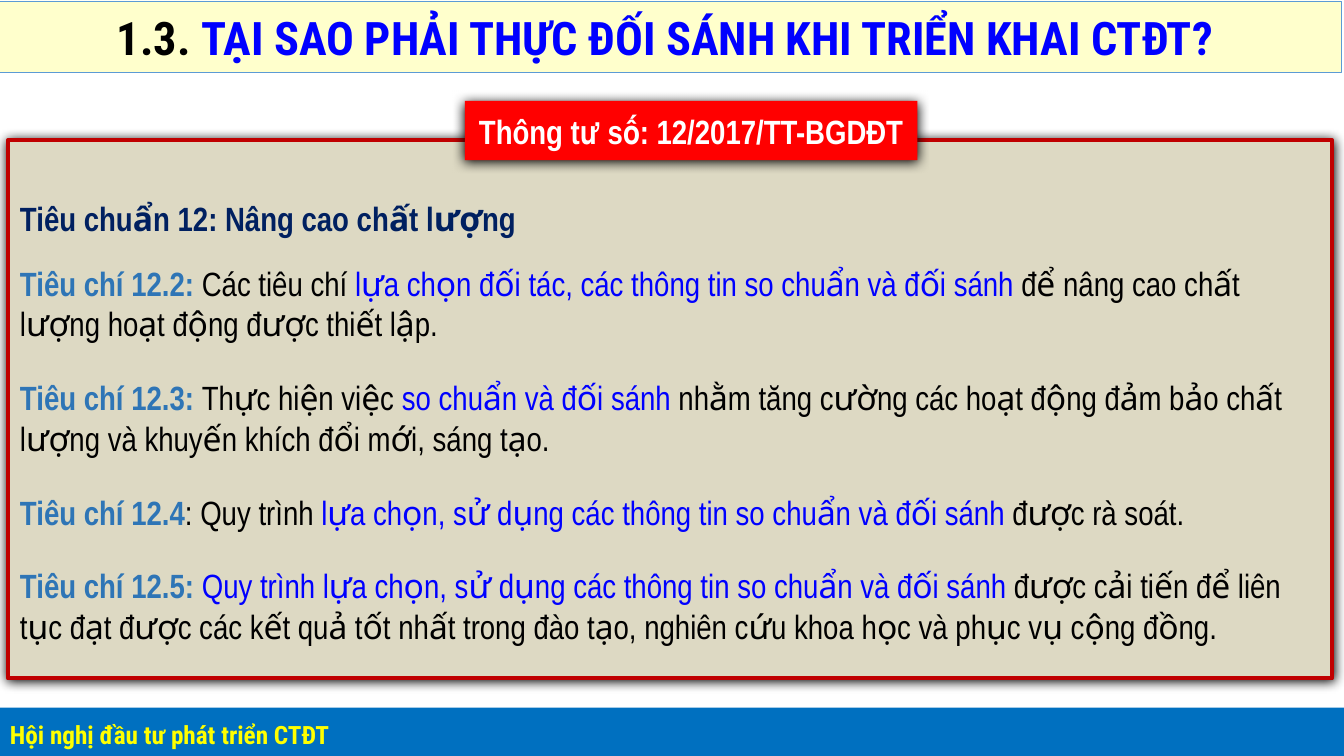
from lxml import etree
from pptx import Presentation
from pptx.dml.color import RGBColor
from pptx.enum import lang, shapes as kinds, text
from pptx.oxml.ns import qn
from pptx.util import Inches, Pt

HEADING_FONT, BODY_FONT = "Roboto Condensed", "Arial Narrow"
BLACK, BLUE, STEEL, NAVY = "000000", "0000FF", "2E75B6", "002060"

# Each run is (wording, colour, bold).
CRITERIA = [
    [("Tiêu chuẩn 12: Nâng cao chất lượng", NAVY, True)],
    [("Tiêu chí 12.2: ", STEEL, True),
     ("Các tiêu chí ", BLACK, False),
     ("lựa chọn đối tác, các thông tin so chuẩn và đối sánh ", BLUE, False),
     ("để nâng cao chất lượng hoạt động được thiết lập.", BLACK, False)],
    [("Tiêu chí 12.3: ", STEEL, True),
     ("Thực hiện việc ", BLACK, False),
     ("so chuẩn và đối sánh ", BLUE, False),
     ("nhằm tăng cường các hoạt động đảm bảo chất lượng và khuyến khích "
      "đổi mới, sáng tạo.", BLACK, False)],
    [("Tiêu chí 12.4", STEEL, True),
     (": Quy trình ", BLACK, False),
     ("lựa chọn, sử dụng các thông tin so chuẩn và đối sánh", BLUE, False),
     (" được rà soát.", BLACK, False)],
    [("Tiêu chí 12.5: ", STEEL, True),
     ("Quy trình lựa chọn, sử dụng các thông tin so chuẩn và đối sánh ", BLUE, False),
     ("được cải tiến để liên tục đạt được các kết quả tốt nhất trong đào tạo, "
      "nghiên cứu khoa học và phục vụ cộng đồng.", BLACK, False)],
]


def rgb(value):
    return RGBColor.from_string(value)


def add_block(parent, left, top, width, height, fill, line=None, line_width=0):
    """Add a flat rectangle with its text set left and in the middle."""
    block = parent.add_shape(kinds.MSO_SHAPE.RECTANGLE, Inches(left), Inches(top),
                             Inches(width), Inches(height))
    block.fill.solid()
    block.fill.fore_color.rgb = rgb(fill)
    if line:
        block.line.color.rgb = rgb(line)
        block.line.width = Pt(line_width)
    else:
        block.line.fill.background()
    block.shadow.inherit = False
    block.text_frame.vertical_anchor = text.MSO_ANCHOR.MIDDLE
    block.text_frame.paragraphs[0].alignment = text.PP_ALIGN.LEFT
    return block


def add_glow_shadow(block):
    """Give the block a soft black shadow just below it."""
    effects = block._element.spPr.find(qn("a:effectLst"))
    shadow = etree.SubElement(effects, qn("a:outerShdw"), blurRad=str(Pt(8.5)),
                              dist=str(Pt(1)), dir="5400000", algn="t",
                              rotWithShape="0")
    etree.SubElement(shadow, qn("a:srgbClr"), val=BLACK)


def write_runs(paragraph, runs, font, size, language=None):
    for wording, colour, bold in runs:
        run = paragraph.add_run()
        run.text = wording
        run.font.name = font
        run.font.size = Pt(size)
        run.font.bold = bold
        run.font.color.rgb = rgb(colour)
        run.font.language_id = language


def add_title(slide, left, top, width, height):
    banner = add_block(slide.shapes, left, top, width, height, "FFFFCC", "5B9BD5", 0.5)
    frame = banner.text_frame
    frame.margin_left, frame.margin_right = Inches(1.19), Inches(0.13)
    frame.margin_top = frame.margin_bottom = Inches(0.07)
    write_runs(frame.paragraphs[0],
               [("1.3. ", BLACK, True),
                ("TẠI SAO PHẢI THỰC ĐỐI SÁNH KHI TRIỂN KHAI CTĐT?", BLUE, True)],
               HEADING_FONT, 33)


def add_footer(slide, left, top, width, height):
    footer = add_block(slide.shapes, left, top, width, height, "0070C0")
    motto = footer.text_frame.paragraphs[0]
    motto.line_spacing = 1.1
    motto.space_before, motto.space_after = Pt(12), Pt(6)
    write_runs(motto, [("Hội nghị đầu tư phát triển CTĐT", "FFFF00", True)],
               HEADING_FONT, 18)


def add_circular_panel(slide, left, top, width, height):
    """Add the framed panel, and the circular's number across its top edge."""
    group = slide.shapes.add_group_shape().shapes
    panel = add_block(group, left, top, width, height, "DDD9C3", "C00000", 3)
    label = add_block(group, left + 4.53, top - 0.39, 4.49, 0.59, "FF0000")
    for block in (panel, label):
        add_glow_shadow(block)
    number = label.text_frame.paragraphs[0]
    number.alignment = text.PP_ALIGN.CENTER
    write_runs(number, [("Thông tư số: 12/2017/TT-BGDĐT", "FFFFFF", True)],
               BODY_FONT, 24)


def add_criteria(slide, left, top, width, height):
    frame = slide.shapes.add_textbox(Inches(left), Inches(top), Inches(width),
                                     Inches(height)).text_frame
    frame.word_wrap = True
    frame.auto_size = text.MSO_AUTO_SIZE.SHAPE_TO_FIT_TEXT
    for index, runs in enumerate(CRITERIA):
        criterion = frame.add_paragraph() if index else frame.paragraphs[0]
        criterion.space_before = criterion.space_after = Pt(12 if index else 6)
        write_runs(criterion, runs, BODY_FONT, 24, lang.MSO_LANGUAGE_ID.VIETNAMESE)


def main():
    deck = Presentation()
    deck.slide_width, deck.slide_height = Inches(13.33), Inches(7.5)
    slide = deck.slides.add_slide(deck.slide_layouts[6])
    add_title(slide, -0.03, 0.01, 13.33, 0.71)
    add_footer(slide, 0, 7.02, 13.33, 0.51)
    add_circular_panel(slide, 0.08, 1.39, 13.13, 5.34)
    add_criteria(slide, 0.1, 1.91, 13.13, 4.59)
    deck.save("out.pptx")


if __name__ == "__main__":
    main()
